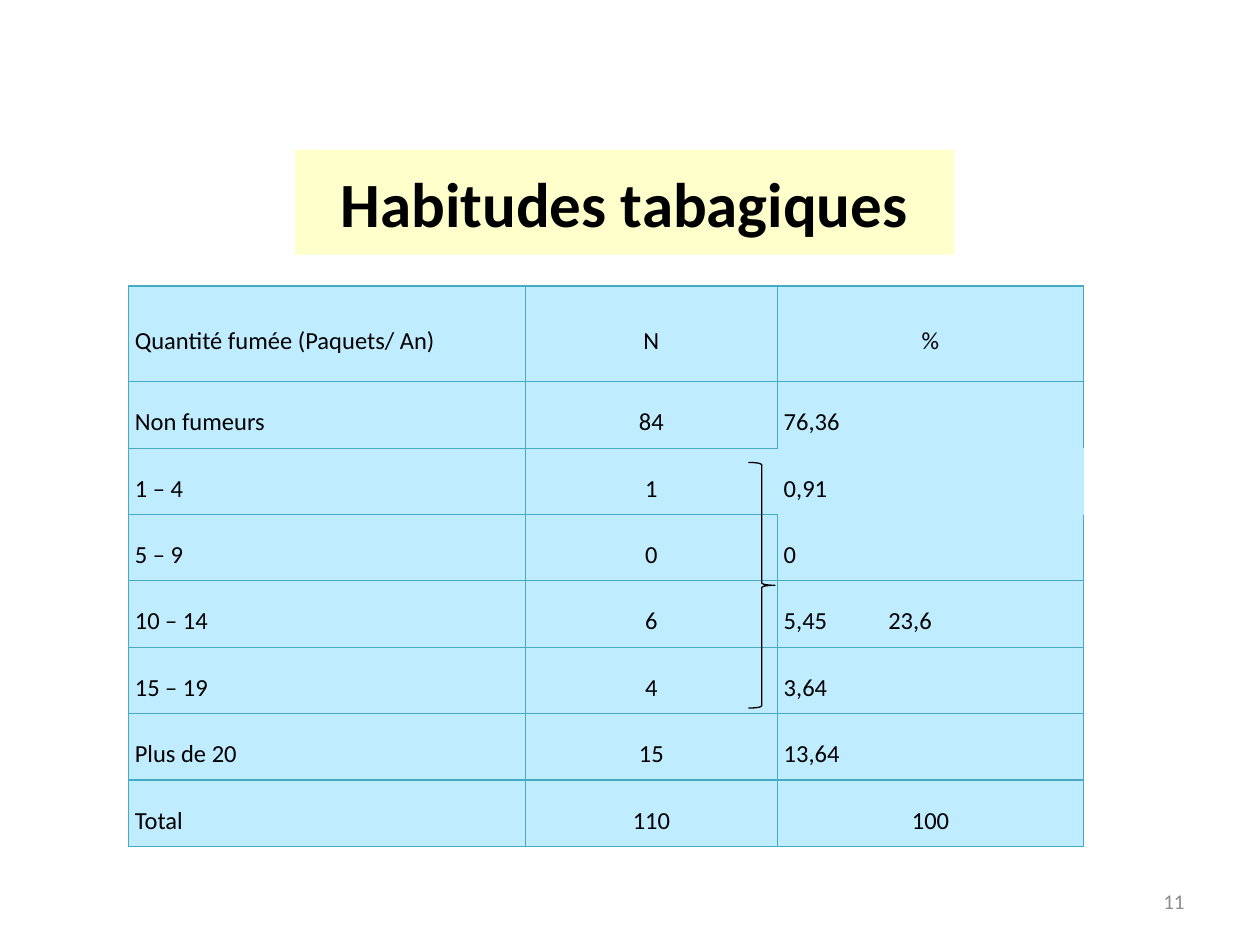
from dataclasses import dataclass

from lxml.etree import SubElement
from pptx import Presentation
from pptx.dml.color import RGBColor
from pptx.enum.shapes import MSO_SHAPE
from pptx.enum.text import MSO_ANCHOR, MSO_AUTO_SIZE, PP_ALIGN
from pptx.oxml.ns import qn
from pptx.util import Inches, Pt


@dataclass(frozen=True)
class Theme:
    font: str = "Calibri"
    ink: str = "000000"
    grey: str = "8C8C8C"
    band: str = "FFFFCC"
    cell: str = "C0ECFF"
    rule: str = "46AAC5"
    head: int = 36
    body: int = 14
    foot: int = 12
    line: float = 0.75


theme = Theme()


def write(par, text, size, color, align, bold=False):
    par.alignment = align
    run = par.add_run()
    run.text = text
    run.font.name = theme.font
    run.font.size = Pt(size)
    run.font.bold = bold
    run.font.color.rgb = RGBColor.from_string(color)


def border(cell, sides):
    props = cell._tc.get_or_add_tcPr()
    for side in "LRTB":
        line = SubElement(props, qn(f"a:ln{side}"), w=str(Pt(theme.line)))
        if side in sides:
            fill = SubElement(line, qn("a:solidFill"))
            SubElement(fill, qn("a:srgbClr"), val=theme.rule)
        else:
            SubElement(line, qn("a:noFill"))


deck = Presentation()
deck.slide_width, deck.slide_height = Inches(10), Inches(7.5)
slide = deck.slides.add_slide(deck.slide_layouts[5])

# Title
title = slide.shapes.title
title.left, title.top = Inches(2.34), Inches(1.25)
title.width, title.height = Inches(5.23), Inches(0.71)
title.fill.solid()
title.fill.fore_color.rgb = RGBColor.from_string(theme.band)
title.text_frame.auto_size = MSO_AUTO_SIZE.SHAPE_TO_FIT_TEXT
write(title.text_frame.paragraphs[0], "Habitudes tabagiques",
      theme.head, theme.ink, PP_ALIGN.CENTER, True)

# Table of smoking habits
rows = [
    ("Quantité fumée (Paquets/ An)", "N", "%"),
    ("Non fumeurs", "84", "76,36"),
    ("1 – 4", "1", "0,91"),
    ("5 – 9", "0", "0"),
    ("10 – 14", "6", "5,45\t23,6"),
    ("15 – 19", "4", "3,64"),
    ("Plus de 20", "15", "13,64"),
    ("Total", "110", "100"),
]
# Sides still ruled around the open cell at row 2, column 2
ruled = {(1, 2): "LTR", (2, 1): "LTB", (2, 2): "", (3, 2): "LRB"}
last = len(rows) - 1
high, first = 4.45, 0.76

table = slide.shapes.add_table(len(rows), 3, Inches(1.02), Inches(2.27),
                               Inches(7.58), Inches(high)).table
table.first_row = table.horz_banding = False
for col, wide in zip(table.columns, (3.15, 2, 2.43)):
    col.width = Inches(wide)
for r, row in enumerate(rows):
    table.rows[r].height = Inches((high - first) / last if r else first)
    for c, text in enumerate(row):
        cell = table.cell(r, c)
        border(cell, ruled.get((r, c), "LRTB"))
        cell.fill.solid()
        cell.fill.fore_color.rgb = RGBColor.from_string(theme.cell)
        cell.vertical_anchor = MSO_ANCHOR.MIDDLE
        cell.margin_left = cell.margin_right = Inches(0.05)
        cell.margin_top = cell.margin_bottom = 0
        mid = c == 1 or (c == 2 and r in (0, last))
        par = cell.text_frame.paragraphs[0]
        par.line_spacing = 1.5
        write(par, text, theme.body, theme.ink,
              PP_ALIGN.CENTER if mid else PP_ALIGN.LEFT)
        if "\t" in text:
            tabs = SubElement(par._p.get_or_add_pPr(), qn("a:tabLst"))
            SubElement(tabs, qn("a:tab"), pos=str(Inches(0.83)), algn="l")

# Brace that groups the smokers
brace = slide.shapes.add_shape(MSO_SHAPE.RIGHT_BRACE, Inches(5.94),
                               Inches(3.67), Inches(0.21), Inches(1.95))
brace.shadow.inherit = False
brace.fill.background()
brace.line.color.rgb = RGBColor.from_string(theme.ink)
brace.line.width = Pt(theme.line)

# Page number
page = slide.shapes.add_textbox(Inches(7.17), Inches(6.95),
                                Inches(2.33), Inches(0.4)).text_frame
page.word_wrap = True
page.vertical_anchor = MSO_ANCHOR.MIDDLE
write(page.paragraphs[0], "11", theme.foot, theme.grey, PP_ALIGN.RIGHT)

deck.save("out.pptx")
